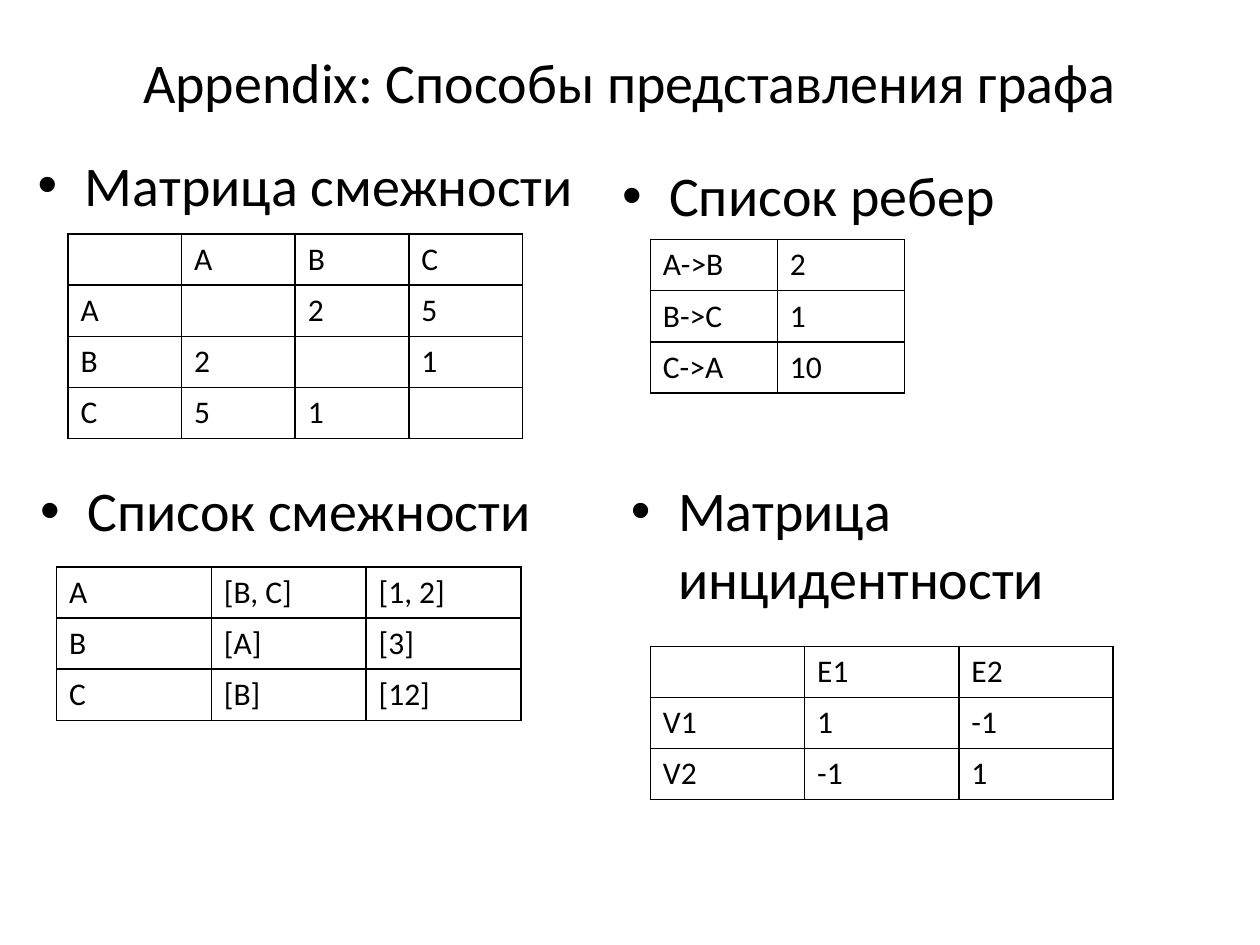
"""Build a slide with four ways to represent a graph."""
from dataclasses import dataclass

from lxml import etree
from pptx import Presentation
from pptx import util as u
from pptx.dml.color import RGBColor
from pptx.enum import text
from pptx.oxml import ns

FONT = "Calibri"
INK = {"text": "000000", "line": "000000"}
ROW = 1.03


@dataclass
class Head:
    words: str
    left: float
    top: float
    width: float
    height: float


@dataclass
class Grid:
    left: float
    top: float
    col: float
    rows: list[list[str]]


TITLE = Head("Appendix: Способы представления графа", 1.27, 0.76, 22.86, 1.75)
HEADS = [
    Head("Матрица смежности", 0.51, 2.9, 11.48, 6.53),
    Head("Список ребер", 12.29, 3.12, 11.4, 6.53),
    Head("Список смежности", 0.56, 9.47, 14.15, 6.32),
    Head("Матрица инцидентности", 12.47, 9.47, 11.53, 8.66),
]
GRIDS = [
    Grid(1.37, 4.72, 2.29, [["", "A", "B", "C"], ["A", "", "2", "5"],
                            ["B", "2", "", "1"], ["C", "5", "1", ""]]),
    Grid(13.11, 4.83, 2.56, [["A->B", "2"], ["B->C", "1"], ["C->A", "10"]]),
    Grid(1.14, 11.43, 3.12, [["A", "[B, C]", "[1, 2]"], ["B", "[A]", "[3]"],
                             ["C", "[B]", "[12]"]]),
    Grid(13.11, 13.03, 3.11, [["", "E1", "E2"], ["V1", "1", "-1"],
                              ["V2", "-1", "1"]]),
]


def add_run(para, words: str, size: int) -> None:
    """Add one styled run to a paragraph."""
    run = para.add_run()
    run.text = words
    run.font.name = FONT
    run.font.size = u.Pt(size)
    run.font.color.rgb = RGBColor.from_string(INK["text"])


def add_head(slide, head: Head):
    """Draw a heading in a text box and return its frame."""
    box = slide.shapes.add_textbox(u.Cm(head.left), u.Cm(head.top),
                                   u.Cm(head.width), u.Cm(head.height))
    frame = box.text_frame
    frame.word_wrap = True
    add_run(frame.paragraphs[0], head.words, 32)
    return frame


def add_dot(para) -> None:
    """Give a paragraph a bullet with a hanging indent."""
    props = para._p.get_or_add_pPr()
    indent = u.Cm(0.95)
    props.set("marL", str(indent))
    props.set("indent", str(-indent))
    etree.SubElement(props, ns.qn("a:buFont"), typeface="Arial")
    etree.SubElement(props, ns.qn("a:buChar"), char="•")


def add_edges(cell) -> None:
    """Draw thin lines on all four sides of a cell."""
    props = cell._tc.get_or_add_tcPr()
    for spot, side in enumerate("LRTB"):
        line = etree.Element(ns.qn(f"a:ln{side}"), w=str(u.Pt(1)))
        fill = etree.SubElement(line, ns.qn("a:solidFill"))
        etree.SubElement(fill, ns.qn("a:srgbClr"), val=INK["line"])
        props.insert(spot, line)


def add_grid(slide, grid: Grid) -> None:
    """Draw a plain ruled table."""
    high, wide = len(grid.rows), len(grid.rows[0])
    table = slide.shapes.add_table(
        high, wide, u.Cm(grid.left), u.Cm(grid.top),
        u.Cm(grid.col * wide), u.Cm(ROW * high)).table
    table.first_row = table.horz_banding = False
    for row, line in enumerate(grid.rows):
        for col, words in enumerate(line):
            cell = table.cell(row, col)
            cell.fill.background()
            add_edges(cell)
            if words:
                add_run(cell.text_frame.paragraphs[0], words, 18)


def main() -> None:
    """Build and save the slide."""
    deck = Presentation()
    deck.slide_width, deck.slide_height = u.Cm(25.4), u.Cm(19.05)
    slide = deck.slides.add_slide(deck.slide_layouts[6])
    frame = add_head(slide, TITLE)
    frame.vertical_anchor = text.MSO_ANCHOR.MIDDLE
    frame.paragraphs[0].alignment = text.PP_ALIGN.CENTER
    for head, grid in zip(HEADS, GRIDS):
        add_dot(add_head(slide, head).paragraphs[0])
        add_grid(slide, grid)
    deck.save("out.pptx")


if __name__ == "__main__":
    main()
